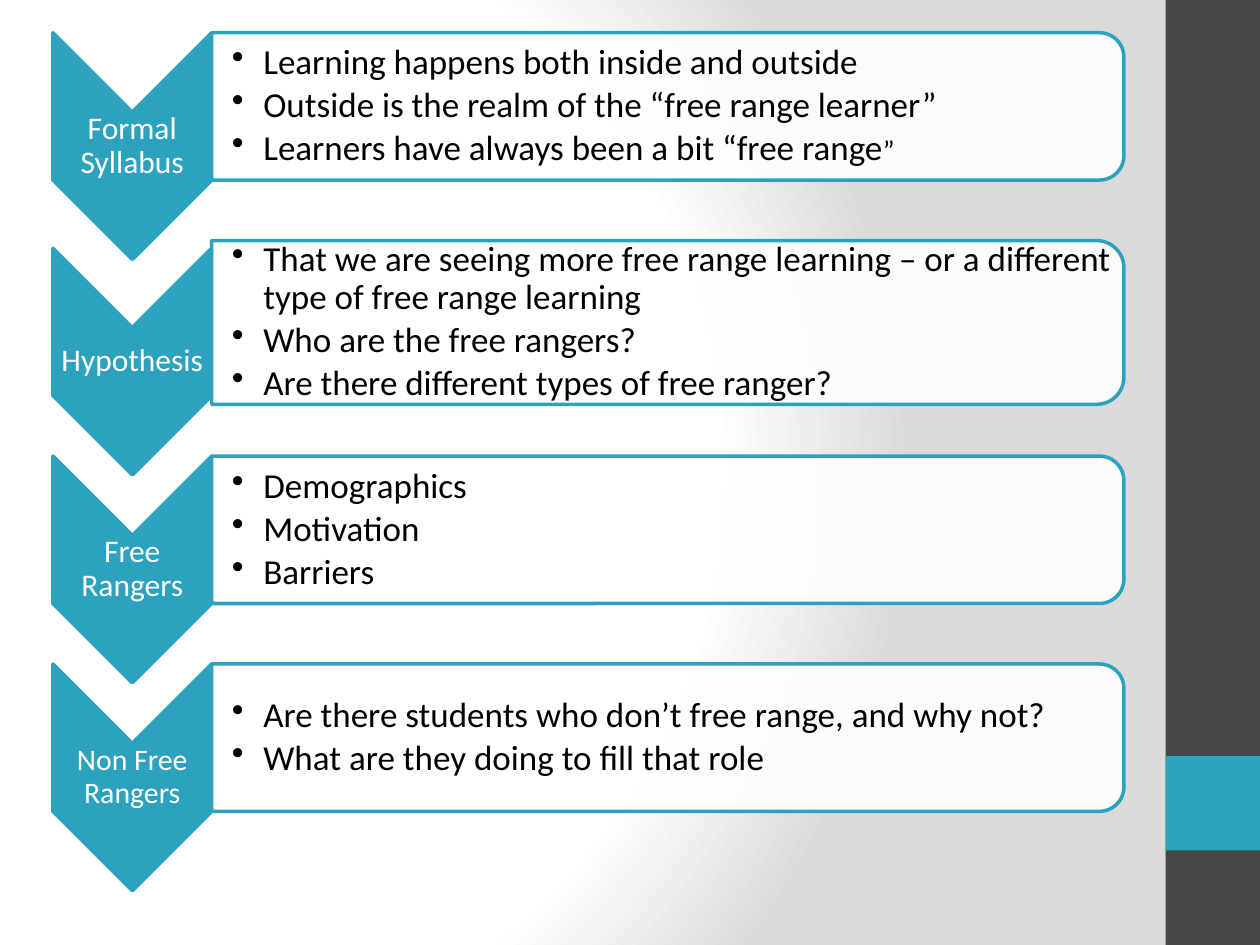
from dataclasses import dataclass

from lxml.etree import SubElement
from pptx import Presentation
from pptx.dml.color import RGBColor
from pptx.enum.shapes import MSO_SHAPE as Preset
from pptx.enum.text import MSO_ANCHOR as Anchor, PP_ALIGN as Align
from pptx.oxml.ns import qn
from pptx.util import Inches, Pt

COLORS = {
    "accent": "2DA2BF",
    "sidebar": "464646",
    "white": "FFFFFF",
    "shade": "DADADA",
    "text": "000000",
}
FONT = "Calibri"
CHEVRON_LEFT, CHEVRON_WIDTH, CHEVRON_HEIGHT = 0.42, 1.26, 1.8
LABEL_OFFSET, LABEL_HEIGHT = 0.63, 0.54
PANEL_LEFT, PANEL_WIDTH = 1.68, 7.24
PANEL_TEXT_WIDTH, PANEL_MARGIN = 7.18, 0.06


@dataclass
class Run:
    text: str
    size: float = 20


@dataclass
class Topic:
    label: Run
    chevron_top: float
    panel_top: float
    panel_height: float
    bullets: list[list[Run]]


TOPICS = [
    Topic(Run("Formal Syllabus", 18), 0.26, 0.26, 1.17, [
        [Run("Learning happens both inside and outside")],
        [Run("Outside is the realm of the “free range learner”")],
        [Run("Learners have always been a bit “free range"), Run("”", 16)],
    ]),
    Topic(Run("Hypothesis", 18), 1.97, 1.91, 1.3, [
        [Run("That we are seeing more free range learning – or a different "
             "type of free range learning")],
        [Run("Who are the free rangers?")],
        [Run("Are there different types of free ranger?")],
    ]),
    Topic(Run("Free Rangers", 18), 3.62, 3.62, 1.17, [
        [Run("Demographics")],
        [Run("Motivation")],
        [Run("Barriers")],
    ]),
    Topic(Run("Non Free Rangers", 17), 5.27, 5.27, 1.17, [
        [Run("Are there students who don’t free range, and why not?")],
        [Run("What are they doing to fill that role")],
    ]),
]


def color(name: str) -> RGBColor:
    return RGBColor.from_string(COLORS[name])


def paint_background(slide) -> None:
    slide.background.fill.gradient()
    gradient = slide.element.find(".//" + qn("a:gradFill"))
    for child in list(gradient):
        gradient.remove(child)
    stops = SubElement(gradient, qn("a:gsLst"))
    for position, name in ((0, "white"), (75, "white"), (100, "shade")):
        stop = SubElement(stops, qn("a:gs"), pos=str(position * 1000))
        SubElement(stop, qn("a:srgbClr"), val=COLORS[name])
    circle = SubElement(gradient, qn("a:path"), {"path": "circle"})
    SubElement(circle, qn("a:fillToRect"),
               l="20000", t="50000", r="100000", b="50000")


def add_block(slide, preset, left: float, top: float, width: float,
              height: float, fill: str, line: str | None = None):
    shape = slide.shapes.add_shape(
        preset, Inches(left), Inches(top), Inches(width), Inches(height))
    shape.shadow.inherit = False
    shape.fill.solid()
    shape.fill.fore_color.rgb = color(fill)
    if line:
        shape.line.color.rgb = color(line)
        shape.line.width = Pt(2)
    else:
        shape.line.fill.background()
    return shape


def add_turned_block(slide, preset, left: float, top: float, width: float,
                     height: float, fill: str):
    shape = add_block(slide, preset, left + (width - height) / 2,
                      top + (height - width) / 2, height, width, fill, "accent")
    shape.rotation = 90
    return shape


def add_text(slide, left: float, top: float, width: float, height: float,
             paragraphs: list[list[Run]], text_color: str,
             bulleted: bool) -> None:
    box = slide.shapes.add_textbox(
        Inches(left), Inches(top), Inches(width), Inches(height))
    frame = box.text_frame
    frame.word_wrap = True
    frame.vertical_anchor = Anchor.MIDDLE
    frame.margin_left = Inches(0.16 if bulleted else 0.01)
    frame.margin_right = frame.margin_top = frame.margin_bottom = Inches(0.01)
    for index, runs in enumerate(paragraphs):
        paragraph = frame.add_paragraph() if index else frame.paragraphs[0]
        paragraph.line_spacing = 0.9
        if bulleted:
            paragraph.alignment = Align.LEFT
            paragraph.level = 1
            paragraph.space_after = Pt(3)
            add_bullet(paragraph)
        else:
            paragraph.alignment = Align.CENTER
        for item in runs:
            run = paragraph.add_run()
            run.text = item.text
            run.font.name = FONT
            run.font.size = Pt(item.size)
            run.font.color.rgb = color(text_color)


def add_bullet(paragraph) -> None:
    properties = paragraph._p.get_or_add_pPr()
    properties.set("marL", str(Inches(0.25)))
    properties.set("indent", str(-Inches(0.25)))
    SubElement(properties, qn("a:buChar"), char="•")


def add_topic(slide, topic: Topic) -> None:
    add_turned_block(slide, Preset.CHEVRON, CHEVRON_LEFT, topic.chevron_top,
                     CHEVRON_WIDTH, CHEVRON_HEIGHT, "accent")
    add_text(slide, CHEVRON_LEFT, topic.chevron_top + LABEL_OFFSET,
             CHEVRON_WIDTH, LABEL_HEIGHT, [[topic.label]], "white", False)
    panel = add_turned_block(
        slide, Preset.ROUND_2_SAME_RECTANGLE, PANEL_LEFT, topic.panel_top,
        PANEL_WIDTH, topic.panel_height, "white")
    fill_color = panel.element.spPr.find(qn("a:solidFill"))[0]
    SubElement(fill_color, qn("a:alpha"), val="90000")
    add_text(slide, PANEL_LEFT, topic.panel_top + PANEL_MARGIN,
             PANEL_TEXT_WIDTH, topic.panel_height - 2 * PANEL_MARGIN,
             topic.bullets, "text", True)


def main() -> None:
    presentation = Presentation()
    presentation.slide_width = Inches(10)
    presentation.slide_height = Inches(7.5)
    slide = presentation.slides.add_slide(presentation.slide_layouts[6])
    paint_background(slide)
    add_block(slide, Preset.RECTANGLE, 9.25, 0, 0.75, 7.5, "sidebar")
    add_block(slide, Preset.RECTANGLE, 9.25, 6, 0.75, 0.75, "accent")
    for topic in TOPICS:
        add_topic(slide, topic)
    presentation.save("out.pptx")


if __name__ == "__main__":
    main()
